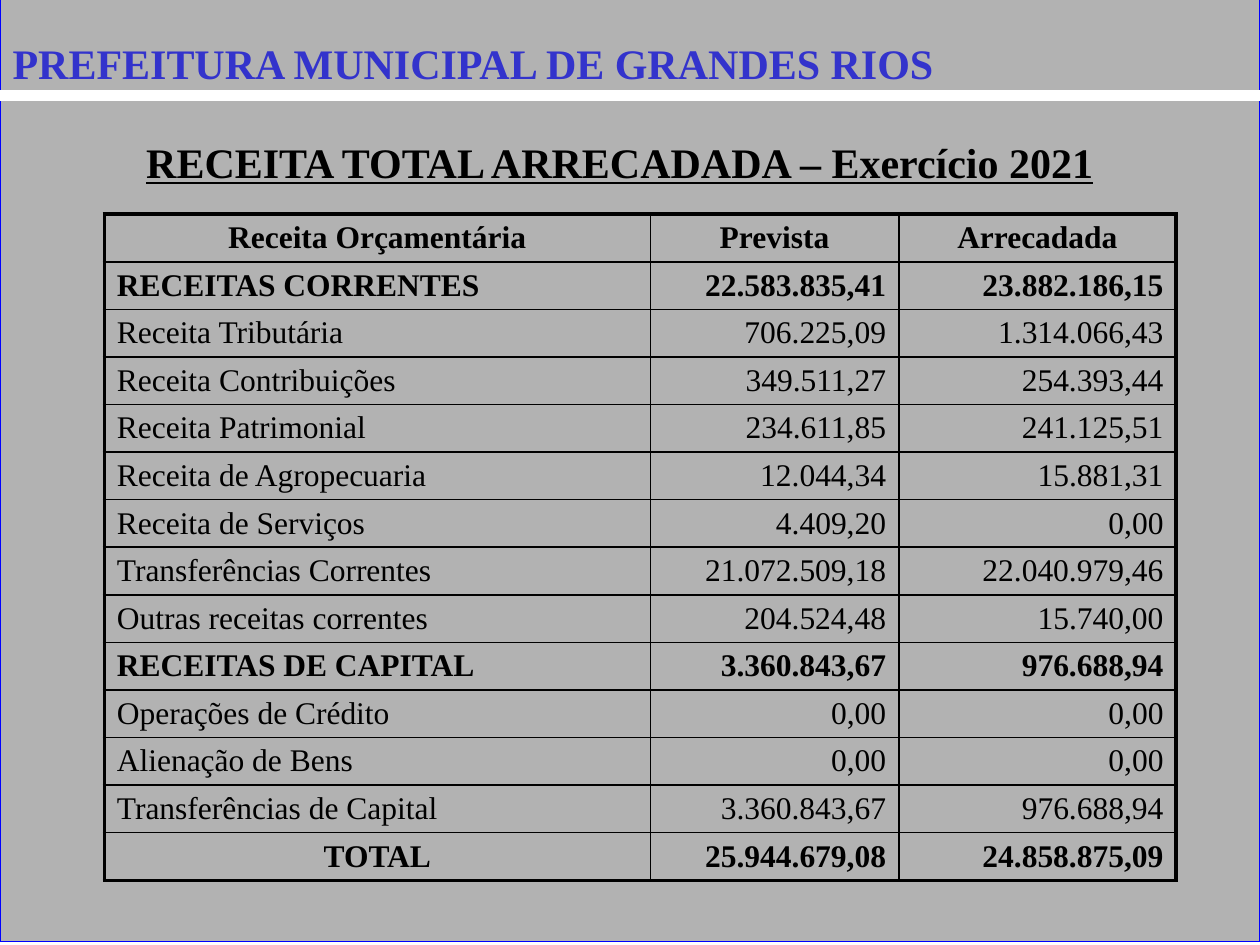
import pptx
import pptx.util
import pptx.dml.color
import pptx.enum.shapes
import pptx.enum.text
import pptx.oxml
import pptx.oxml.ns
import lxml.etree

Pt = pptx.util.Pt
ALIGN = pptx.enum.text.PP_ALIGN
ANCHOR = pptx.enum.text.MSO_ANCHOR
COLORS = {"panel": "B2B2B2", "frame": "0000FF", "rule": "FFFFFF",
          "text": "000000", "banner": "3333CC", "shadow": "808080"}
NAMESPACE = pptx.oxml.ns.nsdecls("a")


def rgb(name):
    return pptx.dml.color.RGBColor.from_string(COLORS[name])


def write(frame, text, color, align, frame_format, font_format):
    for name, value in frame_format.items():
        setattr(frame, name, value)
    para = frame.paragraphs[0]
    para.alignment = align
    span = para.add_run()
    span.text = text
    span.font.color.rgb = rgb(color)
    for name, value in font_format.items():
        setattr(span.font, name, value)
    return span


deck = pptx.Presentation()
deck.slide_width = Pt(720)
deck.slide_height = Pt(540)
page = deck.slides.add_slide(deck.slide_layouts[5])

panel = page.shapes.add_shape(pptx.enum.shapes.MSO_SHAPE.RECTANGLE,
                              Pt(0), Pt(-2), Pt(720), Pt(540))
panel.shadow.inherit = False
panel.fill.solid()
panel.fill.fore_color.rgb = rgb("panel")
panel.line.color.rgb = rgb("frame")
panel.line.width = Pt(0.75)

rule = page.shapes.add_connector(pptx.enum.shapes.MSO_CONNECTOR.STRAIGHT,
                                 Pt(0), Pt(54.5), Pt(720), Pt(54.5))
rule.line.color.rgb = rgb("rule")
rule.line.width = Pt(6)
lxml.etree.SubElement(rule.element.spPr, pptx.oxml.ns.qn("a:effectLst"))

rows = [
    ("Receita Orçamentária", "Prevista", "Arrecadada"),
    ("RECEITAS CORRENTES", "22.583.835,41", "23.882.186,15"),
    ("Receita Tributária", "706.225,09", "1.314.066,43"),
    ("Receita Contribuições", "349.511,27", "254.393,44"),
    ("Receita Patrimonial", "234.611,85", "241.125,51"),
    ("Receita de Agropecuaria", "12.044,34", "15.881,31"),
    ("Receita de Serviços", "4.409,20", "0,00"),
    ("Transferências Correntes", "21.072.509,18", "22.040.979,46"),
    ("Outras receitas correntes", "204.524,48", "15.740,00"),
    ("RECEITAS DE CAPITAL", "3.360.843,67", "976.688,94"),
    ("Operações de Crédito", "0,00", "0,00"),
    ("Alienação de Bens", "0,00", "0,00"),
    ("Transferências de Capital", "3.360.843,67", "976.688,94"),
    ("TOTAL", "25.944.679,08", "24.858.875,09"),
]
widths = [312, 142, 158.5]
row_height = 27.2
last_row, last_column = len(rows) - 1, len(widths) - 1
table = page.shapes.add_table(len(rows), len(widths), Pt(59.6), Pt(122.4),
                              Pt(sum(widths)), Pt(row_height * len(rows))).table
table.first_row = False
table.horz_banding = False
for column, width in zip(table.columns, widths):
    column.width = Pt(width)

cell_format = {"margin_left": Pt(7.2), "margin_right": Pt(7.2), "margin_top": Pt(3),
               "margin_bottom": Pt(3), "vertical_anchor": ANCHOR.MIDDLE}
for row, texts in enumerate(rows):
    table.rows[row].height = Pt(row_height)
    strong = row == 0 or texts[0].isupper()
    for column, text in enumerate(texts):
        cell = table.cell(row, column)
        for name, value in cell_format.items():
            setattr(cell, name, value)
        if row == 0 or text == "TOTAL":
            align = ALIGN.CENTER
        else:
            align = ALIGN.RIGHT if column else ALIGN.LEFT
        write(cell.text_frame, text, "text", align, {},
              {"name": "Times New Roman", "size": Pt(18), "bold": strong})
        outer = {"L": column == 0, "R": column == last_column,
                 "T": row == 0, "B": row == last_row}
        properties = cell._tc.get_or_add_tcPr()
        for side, is_outer in outer.items():
            properties.append(pptx.oxml.parse_xml(
                f'<a:ln{side} {NAMESPACE} w="{Pt(2.25 if is_outer else 1)}"><a:solidFill>'
                f'<a:srgbClr val="{COLORS["text"]}"/></a:solidFill></a:ln{side}>'))
        cell.fill.background()

frame_format = {"word_wrap": True, "auto_size": pptx.enum.text.MSO_AUTO_SIZE.NONE,
                "vertical_anchor": ANCHOR.TOP, "margin_left": Pt(7.2),
                "margin_right": Pt(7.2), "margin_top": Pt(6.5), "margin_bottom": Pt(0)}
heading_format = {"name": "Times New Roman", "size": Pt(24), "bold": True}

heading = page.shapes.add_textbox(Pt(76.5), Pt(71.3), Pt(587), Pt(40))
write(heading.text_frame, "RECEITA TOTAL ARRECADADA – Exercício 2021", "text",
      ALIGN.LEFT, frame_format, {**heading_format, "underline": True})

banner = page.shapes.title
for name, value in {"left": 0, "top": 15, "width": 683, "height": 36}.items():
    setattr(banner, name, Pt(value))
span = write(banner.text_frame, "PREFEITURA MUNICIPAL DE GRANDES RIOS", "banner",
             ALIGN.LEFT, frame_format, heading_format)
shadow = pptx.oxml.parse_xml(
    f'<a:effectLst {NAMESPACE}><a:outerShdw dist="{Pt(2)}" dir="2700000">'
    f'<a:srgbClr val="{COLORS["shadow"]}"/></a:outerShdw></a:effectLst>')
span.font._element.find(pptx.oxml.ns.qn("a:solidFill")).addnext(shadow)
page.shapes.element.append(banner.element)

deck.save("out.pptx")
